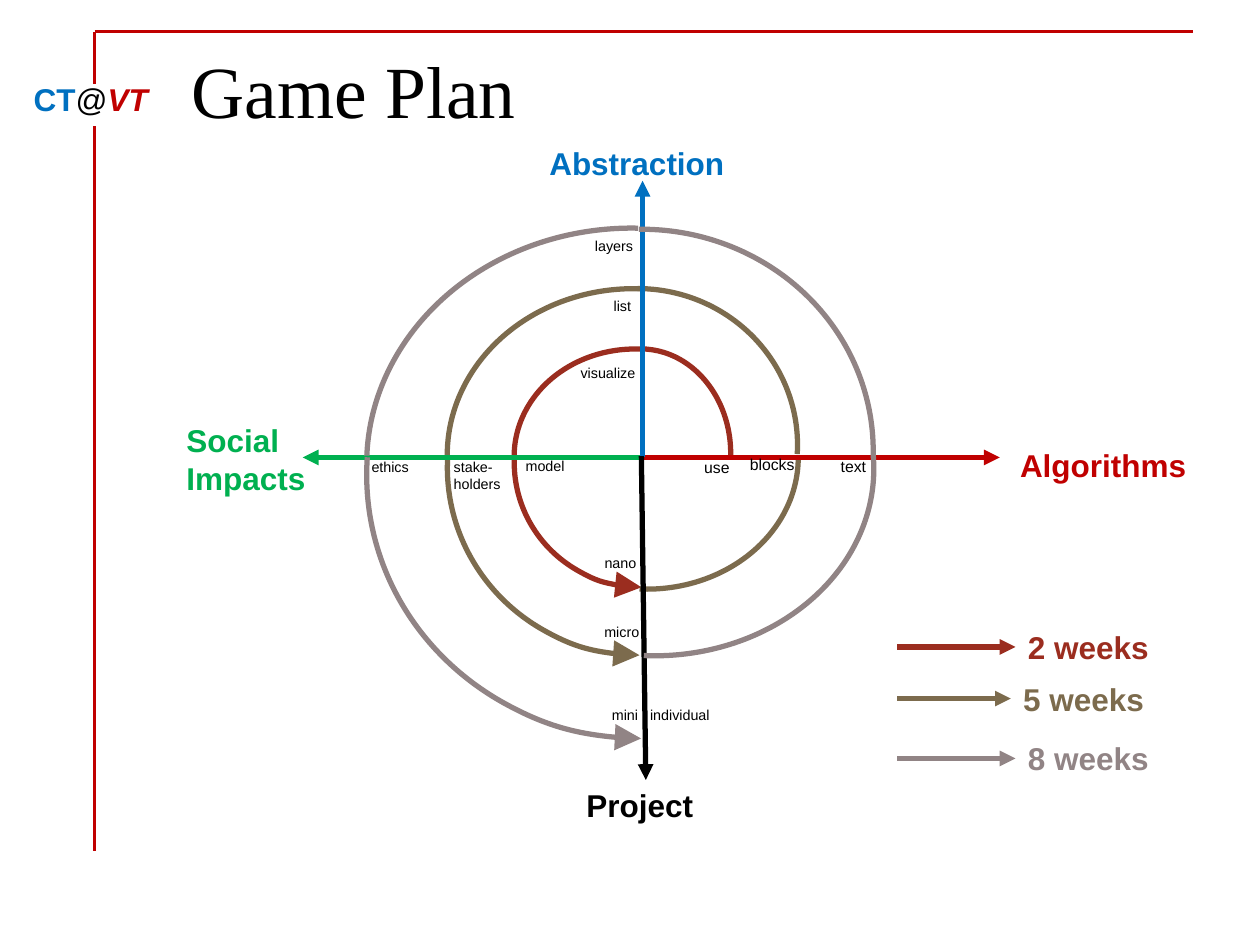
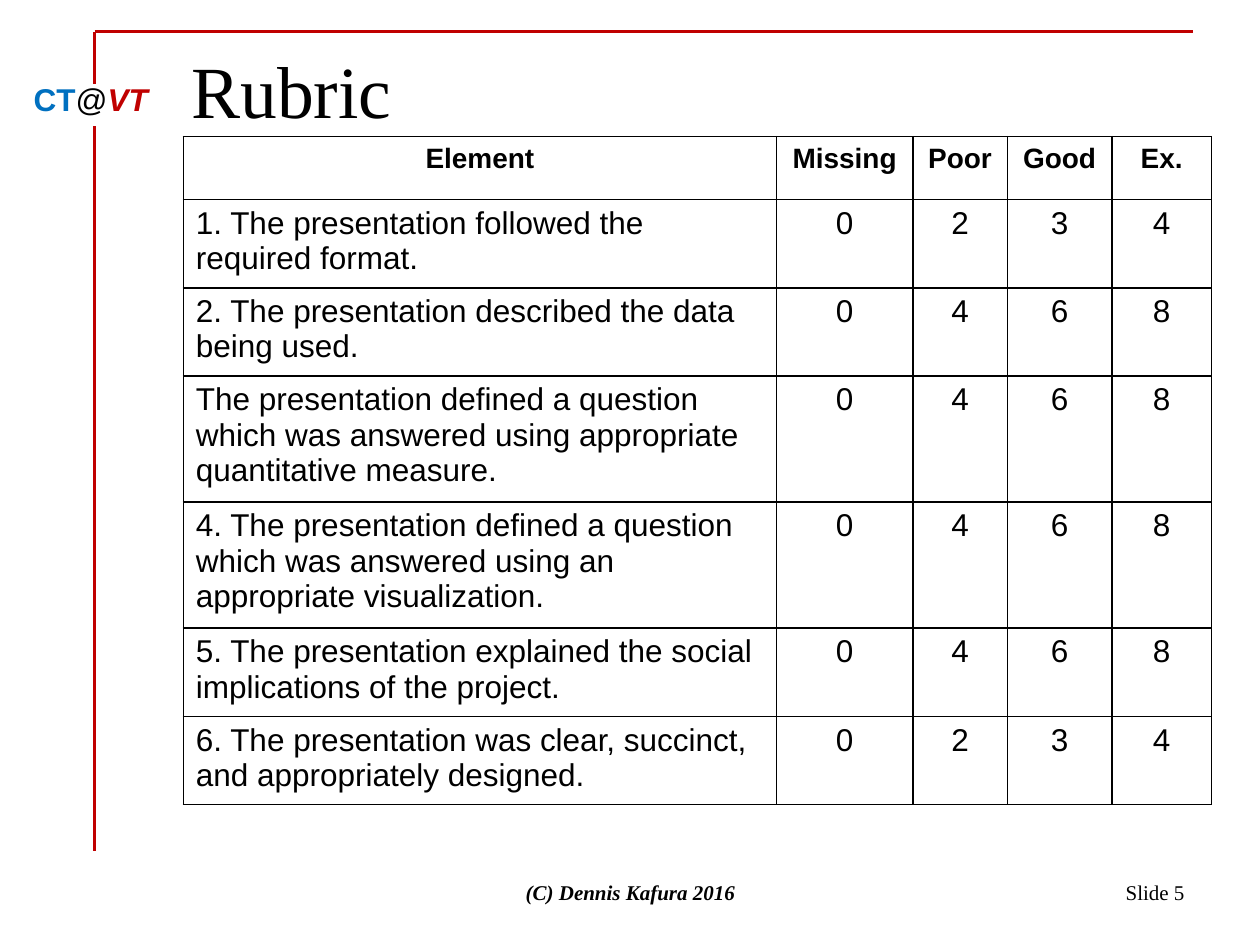
from lxml.etree import SubElement
from pptx import Presentation
from pptx.dml.color import RGBColor
from pptx.enum.shapes import MSO_CONNECTOR, MSO_SHAPE
from pptx.enum.text import MSO_ANCHOR, MSO_AUTO_SIZE, PP_ALIGN
from pptx.oxml.ns import qn
from pptx.util import Pt

BLACK = RGBColor(0x00, 0x00, 0x00)
RED = RGBColor(0xC0, 0x00, 0x00)
BLUE = RGBColor(0x00, 0x70, 0xC0)
GREEN = RGBColor(0x00, 0xB0, 0x50)
RUST = RGBColor(0x9B, 0x2D, 0x1F)
OLIVE = RGBColor(0x7C, 0x6B, 0x4D)
GREY = RGBColor(0x91, 0x84, 0x85)

SANS, SERIF = "Arial", "Times New Roman"
SMALL, MEDIUM, LARGE = 8.2, 9, 18
STROKE = 3

FRAME_LINES = [
    ((54, 18), (682, 18), 2),
    ((54, 18), (54, 48), 1.75),
    ((54, 72), (54, 486), 1.75),
]
BADGE = [("CT", BLUE, True, False), ("@", BLACK, False, False), ("VT", RED, True, True)]

QUARTER = (162, 1.974)
RINGS = {
    "2 weeks": (RUST, [
        (0, 314.6, 199.4, 103, 119.5, QUARTER),
        (270, 301.7, 191.5, 122.4, 138.2, QUARTER),
        (180, 293.8, 193, 145.4, 142.6, QUARTER),
    ]),
    "5 weeks": (OLIVE, [
        (90, 294.5, 175, 150.5, 172.8, QUARTER),
        (0, 272.9, 164.9, 182.9, 178.6, QUARTER),
        (270, 267.1, 153.4, 190.1, 213.1, QUARTER),
        (180, 255.6, 159.8, 219.6, 214.6, QUARTER),
    ]),
    "8 weeks": (GREY, [
        (90, 267.1, 142.6, 213.8, 250.6, (160.155, 1.974)),
        (0, 234, 131, 265, 253.4, (161.61, 0.978)),
        (270, 226.1, 113.8, 270, 303.1, (163.131, 0.917)),
        (180, 209.5, 121, 314.6, 301, (162.114, 2.228)),
    ]),
}
MILESTONES = [
    ("use", 395.3, 257.8, 29.5, MEDIUM),
    ("blocks", 421.4, 256.3, 40.3, MEDIUM),
    ("text", 473.3, 257.6, 29.5, MEDIUM),
    ("visualize", 324.7, 204.5, 46.8, SMALL),
    ("list", 343.6, 166.3, 24.5, SMALL),
    ("layers", 332.9, 131.8, 36.7, SMALL),
    ("model", 293.3, 257.8, 37.4, SMALL),
    ("stake-\nholders", 252.2, 258.1, 41.8, SMALL),
    ("ethics", 205.2, 258.3, 36.7, SMALL),
    ("nano", 338.4, 313.2, 33.1, SMALL),
    ("micro", 338.3, 352.4, 35.3, SMALL),
    ("mini", 342.6, 400, 30.2, SMALL),
    ("individual", 364.4, 400, 49.7, SMALL),
]
ORIGIN = (367.2, 261.4)
AXES = [
    ("Algorithms", RED, (575.8, 251.3, 115.2), (571.3, 261.4)),
    ("Social Impacts", GREEN, (99.5, 236.9, 84.3), (173, 261.4)),
    ("Abstraction", BLUE, (306.8, 78.7, 126), (367.2, 103.3)),
]
PROJECT_START, PROJECT_LABEL = (366.5, 260.6), (328, 445.7, 82.1)
LEGEND_START = 512.6
LEGEND = [("2 weeks", 580.3, 355.3), ("5 weeks", 577.6, 384.8), ("8 weeks", 580.3, 419)]

MINOR, MAJOR = ("0", "2", "3", "4"), ("0", "4", "6", "8")
TWO_LINES, THREE_LINES = 47.4, 67.6
RUBRIC = [
    ("Element", ("Missing", "Poor", "Good", "Ex."), 36),
    ("1. The presentation followed the required format.", MINOR, TWO_LINES),
    ("2. The presentation described the data being used.", MAJOR, TWO_LINES),
    ("The presentation defined a question which was answered using "
     "appropriate quantitative measure.", MAJOR, THREE_LINES),
    ("4. The presentation defined a question which was answered using "
     "an appropriate visualization.", MAJOR, THREE_LINES),
    ("5. The presentation explained the social implications of the project.",
     MAJOR, TWO_LINES),
    ("6. The presentation was clear, succinct, and appropriately designed.",
     MINOR, TWO_LINES),
]
COLUMN_WIDTHS = [339.1, 77.8, 54, 59.8, 56.9]

FOOTERS = [
    ("Slide 5", 516.2, 167.8, PP_ALIGN.RIGHT, {}),
    ("(C) Dennis Kafura 2016", 246.2, 228.2, PP_ALIGN.CENTER, {"bold": True, "italic": True}),
]


def apply(target, formats):
    for name, value in formats.items():
        setattr(target, name, value)


def write(para, text, size, color=BLACK, name=SANS, **formats):
    span = para.add_run()
    span.text = text
    apply(span.font, {"name": name, "size": Pt(size), **formats})
    span.font.color.rgb = color


def add_label(page, text, left, top, width, size, color=BLACK, wrap=False, **formats):
    lines = text.split("\n")
    height = 1.2 * size * len(lines) + 7.2
    box = page.shapes.add_textbox(Pt(left), Pt(top), Pt(width), Pt(height))
    frame = box.text_frame
    apply(frame, {"word_wrap": wrap, "auto_size": MSO_AUTO_SIZE.SHAPE_TO_FIT_TEXT})
    for index, line in enumerate(lines):
        para = frame.add_paragraph() if index else frame.paragraphs[0]
        write(para, line, size, color, **formats)
    return box


def draw_line(shape, color, width, arrow=None, **arrow_size):
    shape.line.color.rgb = color
    shape.line.width = Pt(width)
    if arrow:
        SubElement(shape.line._get_or_add_ln(), qn(arrow), type="triangle", **arrow_size)


def add_line(page, start, end, color, width=STROKE, arrow="a:tailEnd"):
    points = [Pt(value) for value in (*start, *end)]
    line = page.shapes.add_connector(MSO_CONNECTOR.STRAIGHT, *points)
    draw_line(line, color, width, arrow)
    SubElement(line._element.spPr, qn("a:effectLst"))
    return line


def add_page(deck, heading):
    page = deck.slides.add_slide(deck.slide_layouts[5])
    for start, end, width in FRAME_LINES:
        add_line(page, start, end, RED, width, None)
    badge = add_label(page, "", 12.1, 42.3, 80.6, LARGE)
    para = badge.text_frame.paragraphs[0]
    para.clear()
    for text, color, bold, italic in BADGE:
        write(para, text, LARGE, color, bold=bold, italic=italic)
    title = page.shapes.title
    apply(title, {"left": Pt(102.2), "top": Pt(21.6), "width": Pt(581.8), "height": Pt(56.2)})
    apply(title.text_frame, {
        "word_wrap": True, "auto_size": MSO_AUTO_SIZE.NONE,
        "vertical_anchor": MSO_ANCHOR.BOTTOM, "margin_bottom": Pt(1.8),
    })
    para = title.text_frame.paragraphs[0]
    para.alignment = PP_ALIGN.LEFT
    write(para, heading, 42, name=SERIF)
    return page


def add_ring(page, color, arcs):
    for turn, left, top, width, height, angles in arcs:
        arc = page.shapes.add_shape(MSO_SHAPE.ARC, Pt(left), Pt(top), Pt(width), Pt(height))
        arc.rotation = turn
        for index, angle in enumerate(angles):
            arc.adjustments[index] = angle
        arc.fill.background()
        arc.shadow.inherit = False
        draw_line(arc, color, STROKE, "a:headEnd" if turn == 180 else None, w="lg", len="lg")


def add_axes(page):
    for text, color, place, tip in AXES:
        add_line(page, ORIGIN, tip, color)
        add_label(page, text, *place, LARGE, color, wrap=True, bold=True)
    left, top, width = PROJECT_LABEL
    project = add_label(page, "Project", *PROJECT_LABEL, LARGE, wrap=True, bold=True)
    axis = add_line(page, PROJECT_START, (left + width / 2, top), BLACK)
    axis.end_connect(project, 0)


def build_game_plan(deck):
    page = add_page(deck, "Game Plan")
    for name, (color, arcs) in RINGS.items():
        if name == "8 weeks":
            add_axes(page)
        add_ring(page, color, arcs)
    for milestone in MILESTONES:
        add_label(page, *milestone)
    for name, left, top in LEGEND:
        color = RINGS[name][0]
        label = add_label(page, name, left, top, 84.2, LARGE, color, bold=True)
        middle = top + label.height.pt / 2
        arrow = add_line(page, (LEGEND_START, middle), (left, middle), color)
        arrow.end_connect(label, 1)


def add_borders(cell):
    properties = cell._tc.get_or_add_tcPr()
    for index, side in enumerate(("a:lnL", "a:lnR", "a:lnT", "a:lnB")):
        border = properties.makeelement(qn(side), {"w": str(Pt(1))})
        fill = SubElement(border, qn("a:solidFill"))
        SubElement(fill, qn("a:srgbClr"), val=str(BLACK))
        properties.insert(index, border)


def build_rubric(deck):
    page = add_page(deck, "Rubric")
    table = page.shapes.add_table(
        len(RUBRIC), len(COLUMN_WIDTHS), Pt(104.7), Pt(78),
        Pt(sum(COLUMN_WIDTHS)), Pt(sum(height for _, _, height in RUBRIC)),
    ).table
    apply(table, {"first_row": False, "horz_banding": False})
    for column, width in zip(table.columns, COLUMN_WIDTHS):
        column.width = Pt(width)
    for row, (element, scores, height) in enumerate(RUBRIC):
        header = row == 0
        table.rows[row].height = Pt(height)
        for column, text in enumerate((element, *scores)):
            cell = table.cell(row, column)
            cell.fill.background()
            add_borders(cell)
            para = cell.text_frame.paragraphs[0]
            para.alignment = PP_ALIGN.CENTER if header or column else PP_ALIGN.LEFT
            write(para, text, 16 if header else LARGE, bold=header)
    for text, left, width, alignment, formats in FOOTERS:
        box = page.shapes.add_textbox(Pt(left), Pt(491.8), Pt(width), Pt(36))
        apply(box.text_frame, {"word_wrap": True, "vertical_anchor": MSO_ANCHOR.MIDDLE})
        para = box.text_frame.paragraphs[0]
        para.alignment = alignment
        write(para, text, 12, name=SERIF, **formats)


def main():
    deck = Presentation()
    apply(deck, {"slide_width": Pt(720), "slide_height": Pt(540)})
    build_game_plan(deck)
    build_rubric(deck)
    deck.save("out.pptx")


if __name__ == "__main__":
    main()
